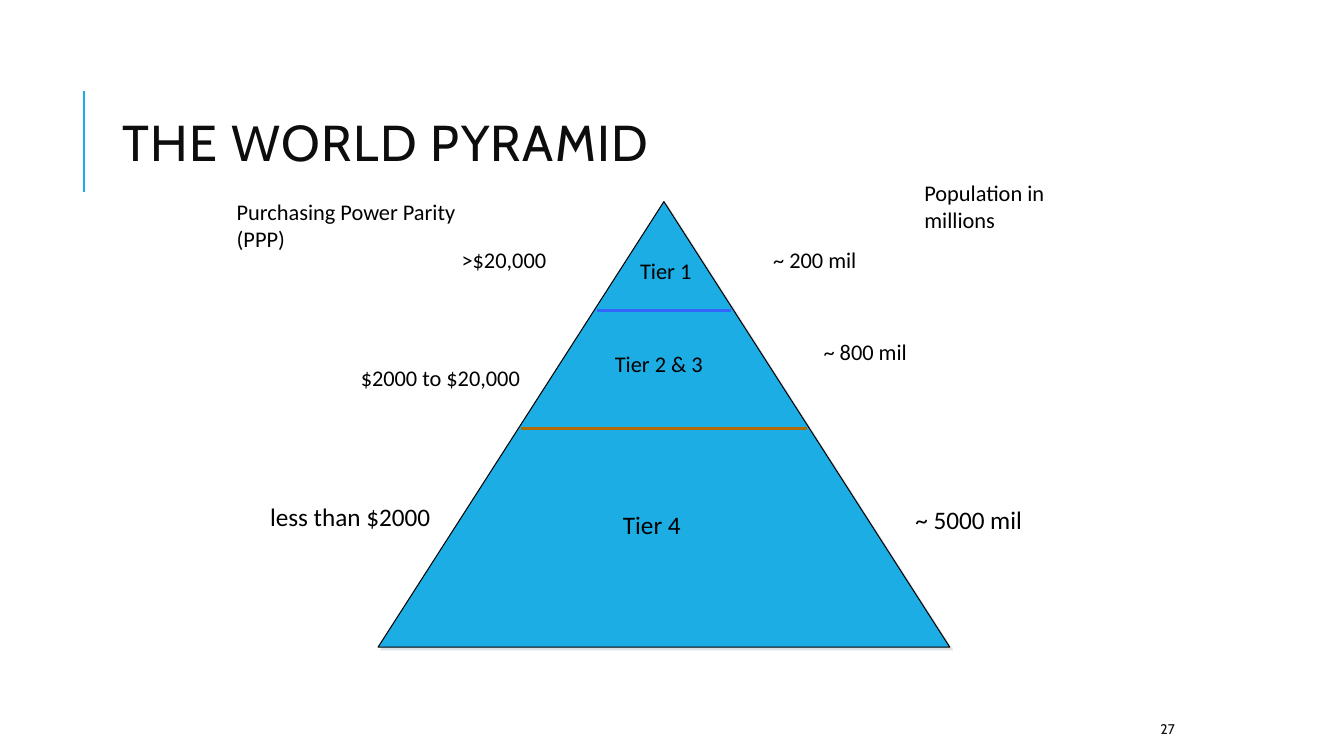
from lxml import etree
from pptx import Presentation
from pptx.dml.color import RGBColor
from pptx.enum.shapes import MSO_CONNECTOR, MSO_SHAPE
from pptx.enum.text import MSO_ANCHOR, PP_ALIGN
from pptx.oxml.ns import qn
from pptx.util import Pt

STRAIGHT = MSO_CONNECTOR.STRAIGHT
TRIANGLE = MSO_SHAPE.ISOSCELES_TRIANGLE
MIDDLE = MSO_ANCHOR.MIDDLE
RIGHT = PP_ALIGN.RIGHT

SKY = RGBColor(0x1C, 0xAD, 0xE4)
BLUE = RGBColor(0x33, 0x66, 0xFF)
BROWN = RGBColor(0xB2, 0x6B, 0x02)
INK = RGBColor(0x0D, 0x0D, 0x0D)
BLACK = RGBColor(0, 0, 0)
SHADOW = RGBColor(0xDF, 0xE3, 0xE5)

EMU_PER_PX = 9144


def px(*lengths):
    return [length * EMU_PER_PX for length in lengths]


class PyramidSlide:
    heading_font = "Cabin"
    label_font = "Calibri"

    def __init__(self, deck):
        self.slide = deck.slides.add_slide(deck.slide_layouts[6])

    def rule(self, x1, y1, x2, y2, color, weight):
        rule = self.slide.shapes.add_connector(STRAIGHT, *px(x1, y1, x2, y2))
        rule.line.color.rgb = color
        rule.line.width = Pt(weight)
        etree.SubElement(rule._element.spPr, qn("a:effectLst"))

    def pyramid(self, left, top, width, height):
        pyramid = self.slide.shapes.add_shape(TRIANGLE, *px(left, top, width, height))
        pyramid.fill.solid()
        pyramid.fill.fore_color.rgb = SKY
        pyramid.line.color.rgb = BLACK
        pyramid.line.width = Pt(0.75)
        pyramid.shadow.inherit = False
        effects = pyramid._element.spPr.find(qn("a:effectLst"))
        shadow = etree.SubElement(effects, qn("a:outerShdw"), blurRad="0",
                                  dist=str(Pt(2.8)), dir="2700000", rotWithShape="0")
        etree.SubElement(shadow, qn("a:srgbClr"), val=str(SHADOW))

    def text(self, wording, left, top, width, height, font, frame_format,
             paragraph_format=None, spacing=None):
        frame = self.slide.shapes.add_textbox(*px(left, top, width, height)).text_frame
        paragraph = frame.paragraphs[0]
        run = paragraph.add_run()
        run.text = wording
        color = font.pop("color")
        for target, values in ((frame, frame_format),
                               (paragraph, paragraph_format or {}),
                               (run.font, font)):
            for attribute, value in values.items():
                setattr(target, attribute, value)
        run.font.color.rgb = color
        if spacing:
            run.font._element.set("spc", str(spacing))

    def heading(self, wording, left, top, width, height, size, paragraph_format, spacing=None):
        self.text(wording, left, top, width, height,
                  {"name": self.heading_font, "size": Pt(size), "color": INK},
                  {"word_wrap": True, "vertical_anchor": MIDDLE}, paragraph_format, spacing)

    def label(self, wording, left, top, width, size=16, wrap=False):
        self.text(wording, left, top, width, 40 if size > 16 else 37,
                  {"name": self.label_font, "size": Pt(size), "color": BLACK},
                  {"word_wrap": wrap})


def main():
    deck = Presentation()
    deck.slide_width, deck.slide_height = px(1333, 750)
    page = PyramidSlide(deck)

    page.rule(83, 190, 83, 90, SKY, 1.5)
    page.heading("27", 530, 708, 645, 30, 10, {"alignment": RIGHT})
    page.heading("THE WORLD PYRAMID", 112, 64, 1063, 164, 36, {"line_spacing": 0.8}, 100)

    page.pyramid(375, 200, 567, 442)
    page.rule(592, 308, 725, 308, BLUE, 2)
    page.rule(517, 425, 800, 425, BROWN, 2)

    page.label("Population in millions", 907, 173, 203, wrap=True)
    page.label("Purchasing Power Parity (PPP)", 225, 192, 280, wrap=True)

    tiers = [
        (16, ("Tier 1", 625, 250, 72), (">$20,000", 448, 239, 116),
         ("~ 200 mil", 757, 239, 109)),
        (16, ("Tier 2 & 3", 600, 342, 112), ("$2000 to $20,000", 348, 356, 194),
         ("~ 800 mil", 807, 331, 109)),
        (18, ("Tier 4", 608, 500, 79), ("less than $2000", 258, 492, 181),
         ("~ 5000 mil", 898, 495, 134)),
    ]
    for size, *labels in tiers:
        for label in labels:
            page.label(*label, size=size)

    deck.save("out.pptx")


if __name__ == "__main__":
    main()
